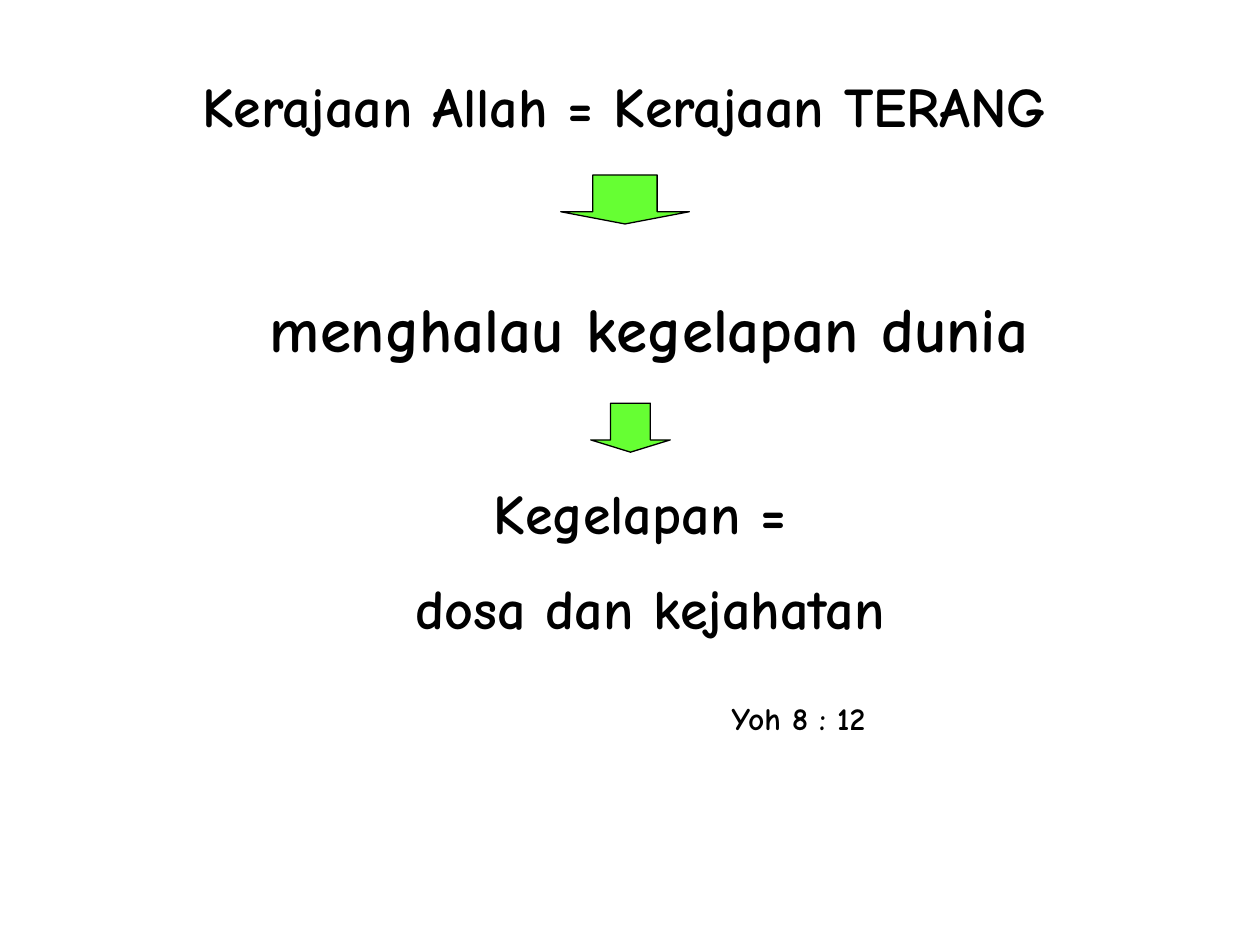
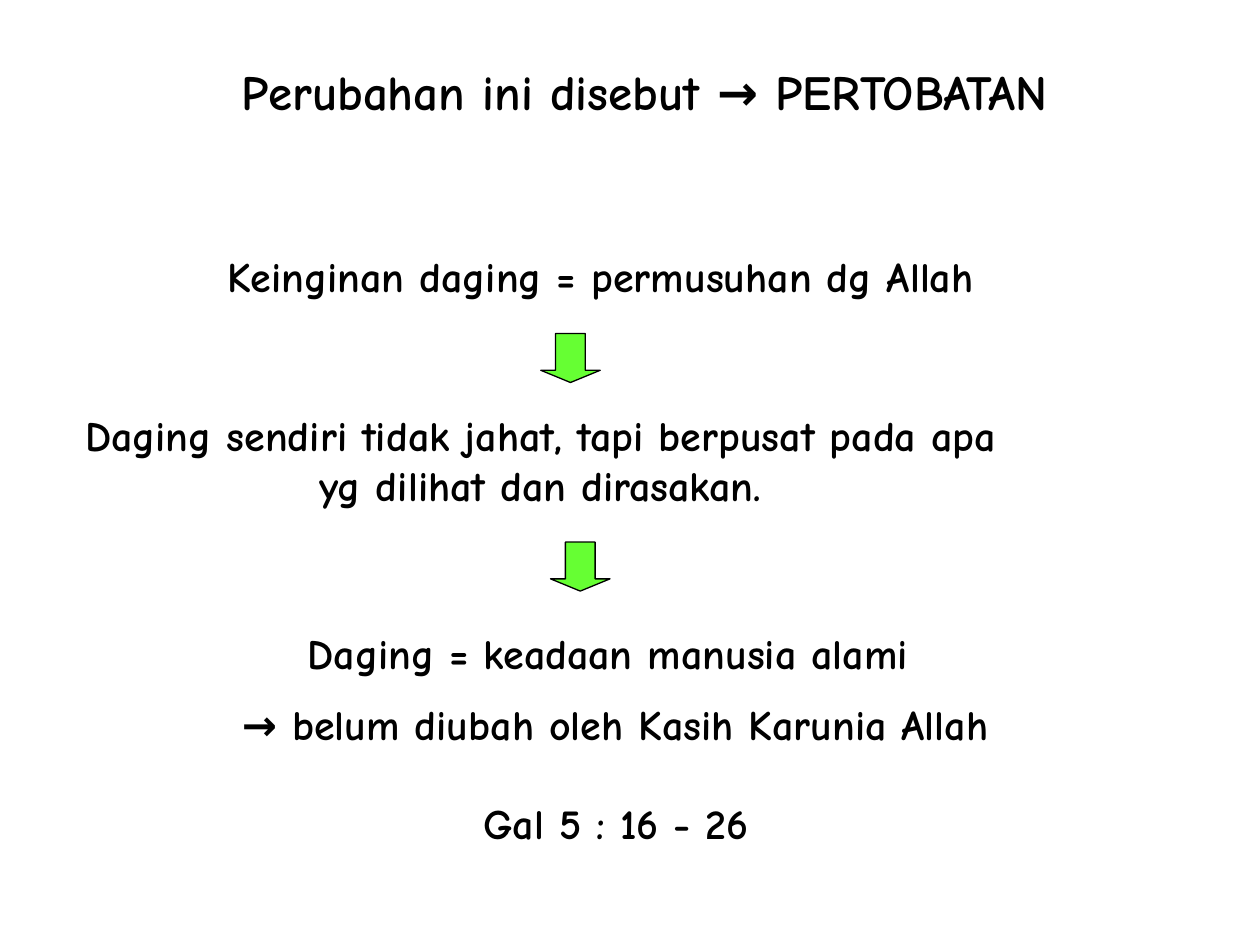
from pptx import Presentation
from pptx.dml.color import RGBColor
from pptx.enum.shapes import MSO_SHAPE
from pptx.enum.text import MSO_AUTO_SIZE, PP_ALIGN
from pptx.util import Pt

DOWN_ARROW = MSO_SHAPE.DOWN_ARROW
GROW = MSO_AUTO_SIZE.SHAPE_TO_FIT_TEXT
CENTER, LEFT = PP_ALIGN.CENTER, PP_ALIGN.LEFT

FONT = "Comic Neue"
COLORS = {"text": "000000", "arrow": "66FF33", "outline": "000000"}
ARROW_HEIGHT = 28

# Texts: paragraphs, box (left, top, width, height), size, alignment.
# Arrows: left, top, width.
SLIDES = [
    {
        "texts": [
            (["Kerajaan Allah = Kerajaan TERANG"], (42.5, 37.5, 629, 103), 32, CENTER),
            (["menghalau kegelapan dunia"], (70.5, 162, 601, 50), 36, CENTER),
            (["Kegelapan = ", "dosa dan kejahatan"], (54, 270, 635, 103), 32, CENTER),
            (["Yoh 8 : 12"], (411, 396, 119, 29), 18, LEFT),
        ],
        "arrows": [(320.4, 100, 73.5), (337.6, 230.4, 45.4)],
    },
    {
        "texts": [
            (["Perubahan ini disebut → PERTOBATAN"], (36.6, 31.6, 663, 41), 28, CENTER),
            (["Keinginan daging = permusuhan dg Allah"], (54, 139.6, 578, 36), 24, CENTER),
            (["Daging sendiri tidak jahat, tapi berpusat pada apa yg dilihat dan dirasakan."],
             (36.6, 230.4, 544.4, 65), 24, CENTER),
            (["Daging = keadaan manusia alami ", "→ belum diubah oleh Kasih Karunia Allah"],
             (42.5, 355, 618, 79), 24, CENTER),
            (["Gal 5 : 16 - 26"], (43, 452, 618, 36), 24, CENTER),
        ],
        "arrows": [(309, 190.6, 34), (314.6, 309.8, 34)],
    },
]


def color(name):
    return RGBColor.from_string(COLORS[name])


def add_text(slide, paragraphs, box, size, alignment):
    """Add a bold text box whose later paragraphs follow a half-size gap."""
    frame = slide.shapes.add_textbox(*map(Pt, box)).text_frame
    frame.word_wrap = True
    frame.auto_size = GROW
    for index, text in enumerate(paragraphs):
        paragraph = frame.add_paragraph() if index else frame.paragraphs[0]
        paragraph.alignment = alignment
        paragraph.space_before = Pt(size / 2 if index else 0)
        run = paragraph.add_run()
        run.text = text
        run.font.name = FONT
        run.font.size = Pt(size)
        run.font.bold = True
        run.font.color.rgb = color("text")


def add_down_arrow(slide, left, top, width):
    shape = slide.shapes.add_shape(DOWN_ARROW, Pt(left), Pt(top), Pt(width), Pt(ARROW_HEIGHT))
    shape.adjustments[0] = 0.5
    # The head's length is measured against the shorter side.
    shape.adjustments[1] = 0.25
    shape.shadow.inherit = False
    shape.fill.solid()
    shape.fill.fore_color.rgb = color("arrow")
    shape.line.color.rgb = color("outline")
    shape.line.width = Pt(0.75)


def main():
    presentation = Presentation()
    presentation.slide_width, presentation.slide_height = Pt(720), Pt(540)
    blank = presentation.slide_layouts[6]
    for content in SLIDES:
        slide = presentation.slides.add_slide(blank)
        for text in content["texts"]:
            add_text(slide, *text)
        for arrow in content["arrows"]:
            add_down_arrow(slide, *arrow)
    presentation.save("out.pptx")


if __name__ == "__main__":
    main()
